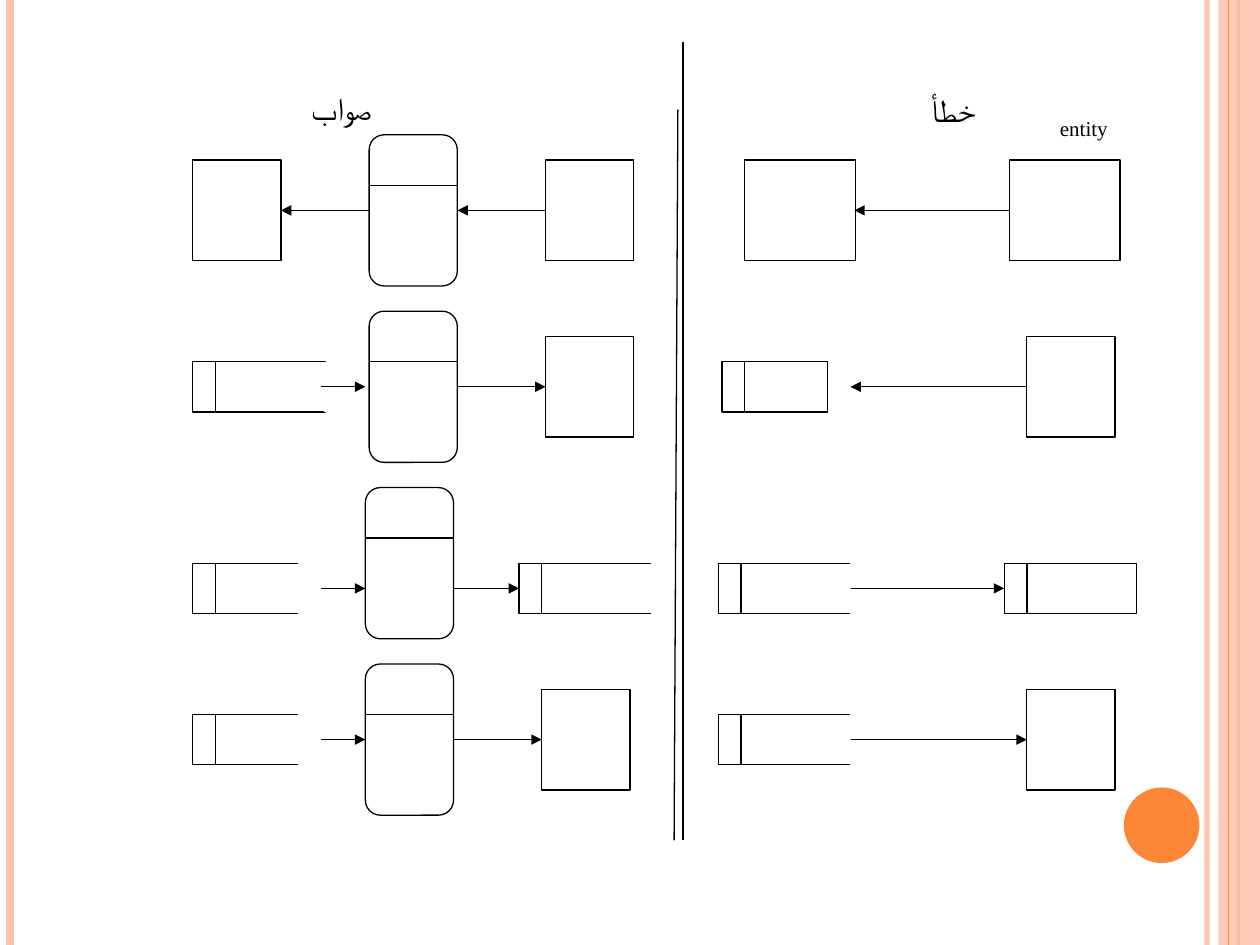
from lxml import etree
from pptx import Presentation
from pptx.dml.color import RGBColor
from pptx.enum.shapes import MSO_CONNECTOR, MSO_SHAPE
from pptx.enum.text import PP_ALIGN
from pptx.oxml.ns import qn
from pptx.util import Inches, Pt

RECTANGLE = MSO_SHAPE.RECTANGLE
ROUNDED = MSO_SHAPE.ROUNDED_RECTANGLE
OVAL = MSO_SHAPE.OVAL
STRAIGHT = MSO_CONNECTOR.STRAIGHT
RIGHT = PP_ALIGN.RIGHT
BLACK, WHITE, PEACH, ORANGE = "000000", "FFFFFF", "FEC3AE", "FE8637"

presentation = Presentation()
presentation.slide_width = Inches(10)
presentation.slide_height = Inches(7.5)
slide = presentation.slides.add_slide(presentation.slide_layouts[6])


def add_line(x1, y1, x2, y2, color=BLACK, width=0.75, arrow=False, opacity=100):
    line = slide.shapes.add_connector(STRAIGHT, Inches(x1), Inches(y1), Inches(x2), Inches(y2))
    line.line.color.rgb = RGBColor.from_string(color)
    line.line.width = Pt(width)
    properties = line._element.spPr
    if opacity < 100:
        etree.SubElement(properties.find(".//" + qn("a:srgbClr")), qn("a:alpha"), val=str(opacity * 1000))
    if arrow:
        etree.SubElement(properties.find(qn("a:ln")), qn("a:tailEnd"), type="triangle")
    etree.SubElement(properties, qn("a:effectLst"))


def add_text(text, left, top, width, height, font="Cambria", size=18, color=BLACK, right_inset=0.1, wrap=True):
    box = slide.shapes.add_textbox(Inches(left), Inches(top), Inches(width), Inches(height))
    box.text_frame.word_wrap = wrap
    box.text_frame.margin_right = Inches(right_inset)
    paragraph = box.text_frame.paragraphs[0]
    paragraph.alignment = RIGHT
    paragraph._p.get_or_add_pPr().set("rtl", "1")
    run = paragraph.add_run()
    run.text = text
    run.font.name = font
    run.font.size = Pt(size)
    run.font.color.rgb = RGBColor.from_string(color)
    etree.SubElement(run._r.get_or_add_rPr(), qn("a:cs"), typeface=font)


add_line(9.58, 0, 9.58, 7.5, PEACH, 3, opacity=93)
add_line(0.08, 0, 0.08, 7.5, PEACH, 4.5)
add_line(9.83, 0, 9.83, 7.5, ORANGE, 1.5)

entities = [
    (5.91, 1.27, 0.88), (8.01, 1.27, 0.88), (1.53, 1.27, 0.7), (4.33, 1.27, 0.7),
    (4.33, 2.67, 0.7), (8.15, 2.67, 0.7), (4.3, 5.47, 0.7), (8.15, 5.47, 0.7),
]
processes = [(2.93, 1.07), (2.93, 2.47), (2.9, 3.87), (2.9, 5.27)]
stores = [
    (1.53, 2.87, 1.05), (5.73, 2.87, 0.84),
    (1.53, 4.47, 0.84), (4.12, 4.47, 1.05), (5.7, 4.47, 1.05), (7.97, 4.47, 1.05),
    (1.53, 5.67, 0.84), (5.7, 5.67, 1.05),
]
open_ends = [(6.58, 2.87), (2.37, 4.47), (5.17, 4.47), (6.75, 4.47), (2.37, 5.67), (6.75, 5.67)]

shapes = [(RECTANGLE, 9.67, 0, 0.33, 7.5, PEACH, None), (OVAL, 8.92, 6.25, 0.6, 0.6, ORANGE, None)]
shapes += [(RECTANGLE, x, y, width, 0.8, WHITE, BLACK) for x, y, width in entities]
shapes += [(ROUNDED, x, y, 0.7, 1.2, WHITE, BLACK) for x, y in processes]
shapes += [(RECTANGLE, x, y, width, 0.4, WHITE, BLACK) for x, y, width in stores]
shapes += [(RECTANGLE, x, y, 0.17, 0.4, WHITE, WHITE) for x, y in open_ends]

for kind, left, top, width, height, fill, outline in shapes:
    shape = slide.shapes.add_shape(kind, Inches(left), Inches(top), Inches(width), Inches(height))
    shape.shadow.inherit = False
    shape.fill.solid()
    shape.fill.fore_color.rgb = RGBColor.from_string(fill)
    if outline:
        shape.line.color.rgb = RGBColor.from_string(outline)
        shape.line.width = Pt(0.75)
    else:
        shape.line.fill.background()
    if kind == ROUNDED:
        shape.adjustments[0] = 0.17
    if fill == PEACH:
        etree.SubElement(shape._element.spPr.find(".//" + qn("a:srgbClr")), qn("a:alpha"), val="87000")

add_line(9.75, 0, 9.75, 7.5, ORANGE)
add_line(5.38, 0.87, 5.35, 6.67)
add_line(5.42, 0.33, 5.42, 6.67)
add_line(2.58, 2.87, 2.58, 3.27, WHITE)

for x, y in processes:
    add_line(x, y + 0.4, x + 0.7, y + 0.4)
for x, y, width in stores:
    add_line(x + 0.18, y, x + 0.18, y + 0.4)

flows = {
    1.67: [(2.93, 2.23), (4.33, 3.63), (8.01, 6.78)],
    3.07: [(2.55, 2.9), (3.63, 4.33), (8.15, 6.75)],
    4.67: [(2.55, 2.9), (3.6, 4.12), (6.75, 7.97)],
    5.87: [(2.55, 2.9), (3.6, 4.3), (6.75, 8.15)],
}
for y, row in flows.items():
    for start, end in row:
        add_line(start, y, end, y, arrow=True)

add_text("خطأ", 1.25, 0.67, 8.09, 6, right_inset=1.6)
add_text("entity", 8.01, 0.87, 0.88, 0.6, font="Times New Roman", size=12)
add_text("صواب", 2.21, 0.66, 0.9, 0.4, right_inset=0.16, wrap=False)

presentation.save("out.pptx")
